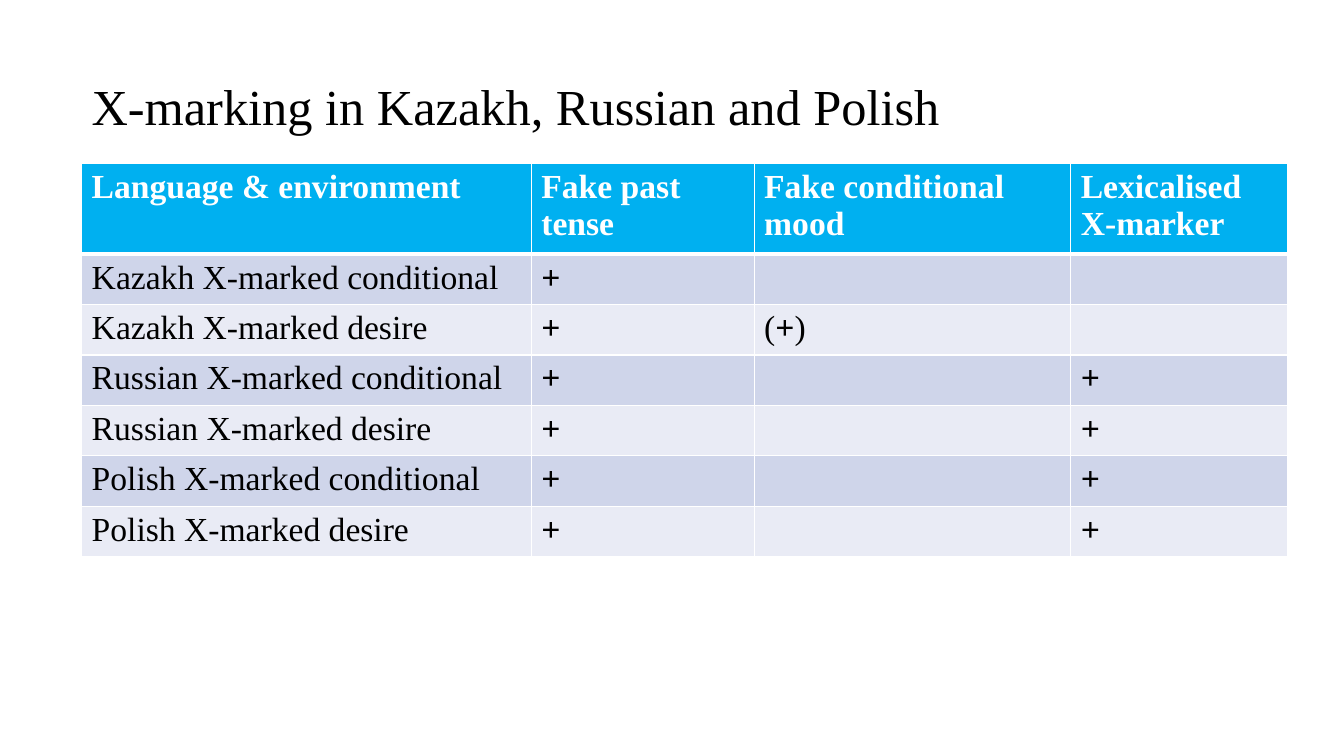
from lxml import etree
from pptx import Presentation
from pptx.dml.color import RGBColor
from pptx.enum.text import MSO_ANCHOR
from pptx.oxml.ns import qn
from pptx.util import Inches, Pt

MIDDLE = MSO_ANCHOR.MIDDLE
FONT = "Times New Roman"
BLACK, WHITE, HEADER_BLUE = "000000", "FFFFFF", "00B0F0"
BANDS = ["CFD5EA", "E9EBF5"]
COLUMN_WIDTHS = [4.46, 2.21, 3.14, 2.15]
HEADER_HEIGHT, ROW_HEIGHT = 0.82, 0.47
HEADINGS = ["Language & environment", "Fake past tense",
            "Fake conditional mood", "Lexicalised X-marker"]
MARKINGS = [
    ["Kazakh X-marked conditional", "+", "", ""],
    ["Kazakh X-marked desire", "+", "(+)", ""],
    ["Russian X-marked conditional", "+", "", "+"],
    ["Russian X-marked desire", "+", "", "+"],
    ["Polish X-marked conditional", "+", "", "+"],
    ["Polish X-marked desire", "+", "", "+"],
]


def rgb(value):
    """Return the colour for a hex string."""
    return RGBColor.from_string(value)


def add_run(paragraph, text, size, color, bold=False):
    """Append one styled run to a paragraph."""
    run = paragraph.add_run()
    run.text = text
    run.font.name = FONT
    run.font.size = Pt(size)
    run.font.bold = bold
    run.font.color.rgb = rgb(color)


def add_title(slide, text):
    """Add the slide heading."""
    box = slide.shapes.add_textbox(Inches(0.81), Inches(0.36), Inches(11.5), Inches(1.45))
    frame = box.text_frame
    frame.word_wrap = True
    frame.vertical_anchor = MIDDLE
    heading = frame.paragraphs[0]
    heading.line_spacing = 0.9
    add_run(heading, text, 36, BLACK)


def set_borders(cell, top, bottom):
    """Draw white cell borders with the given top and bottom widths in points."""
    properties = cell._tc.get_or_add_tcPr()
    for side, width in (("L", 1), ("R", 1), ("T", top), ("B", bottom)):
        line = etree.SubElement(properties, qn(f"a:ln{side}"), w=str(Pt(width)))
        fill = etree.SubElement(line, qn("a:solidFill"))
        etree.SubElement(fill, qn("a:srgbClr"), val=WHITE)


def fill_cell(cell, runs, text_color, background, top=1, bottom=1):
    """Style a cell and write its (text, bold) runs."""
    set_borders(cell, top, bottom)
    cell.fill.solid()
    cell.fill.fore_color.rgb = rgb(background)
    for text, bold in runs:
        add_run(cell.text_frame.paragraphs[0], text, 24, text_color, bold)


def add_marking_table(slide):
    """Add the table of X-marking by language and environment."""
    height = HEADER_HEIGHT + ROW_HEIGHT * len(MARKINGS)
    table = slide.shapes.add_table(
        len(MARKINGS) + 1, len(HEADINGS), Inches(0.81), Inches(1.62),
        Inches(sum(COLUMN_WIDTHS)), Inches(height)).table
    for column, width in zip(table.columns, COLUMN_WIDTHS):
        column.width = Inches(width)
    for row in table.rows:
        row.height = Inches(ROW_HEIGHT)
    table.rows[0].height = Inches(HEADER_HEIGHT)

    for c, heading in enumerate(HEADINGS):
        fill_cell(table.cell(0, c), [(heading, True)], WHITE, HEADER_BLUE, bottom=3)
    for r, (environment, *marks) in enumerate(MARKINGS, start=1):
        band = BANDS[(r - 1) % 2]
        top = 3 if r == 1 else 1
        fill_cell(table.cell(r, 0), [(environment, False)], BLACK, band, top)
        for c, mark in enumerate(marks, start=1):
            runs = [(symbol, symbol == "+") for symbol in mark]
            fill_cell(table.cell(r, c), runs, BLACK, band, top)


def main():
    """Build and save the slide."""
    deck = Presentation()
    deck.slide_width = Inches(13.33)
    deck.slide_height = Inches(7.5)
    slide = deck.slides.add_slide(deck.slide_layouts[6])
    add_title(slide, "X-marking in Kazakh, Russian and Polish")
    add_marking_table(slide)
    deck.save("out.pptx")


if __name__ == "__main__":
    main()
